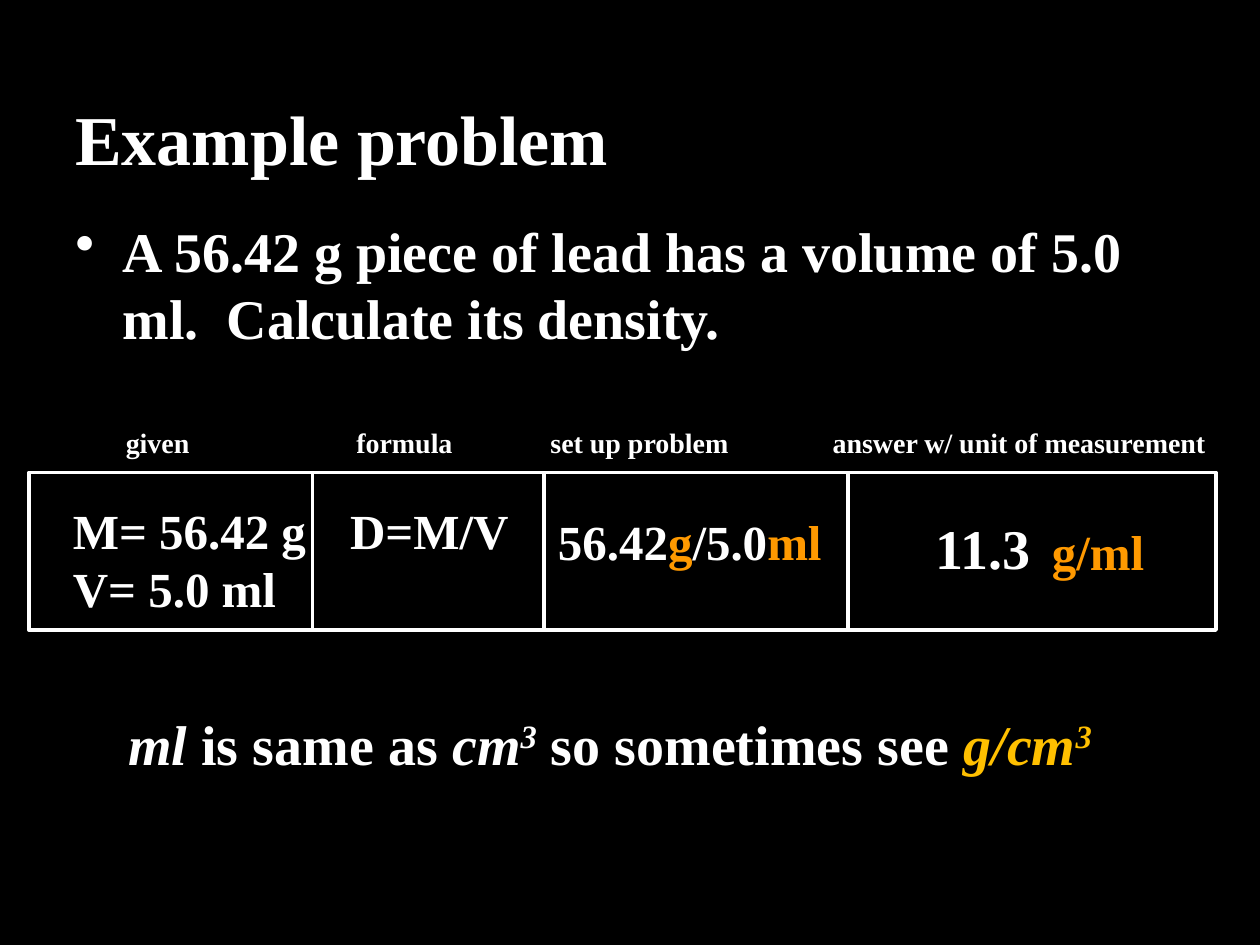
from dataclasses import dataclass

import pptx
import pptx.dml.color
import pptx.enum.shapes
import pptx.enum.text
import pptx.oxml
import pptx.oxml.ns
import pptx.util

COLUMNS, ROWS = 100, 75
FONT = "Times New Roman"
BLACK, WHITE, ORANGE, GOLD = "000000", "FFFFFF", "FF9900", "FFC000"
LINE_WIDTH = 2.25
FRAME_LEFT, FRAME_TOP, FRAME_WIDTH, FRAME_HEIGHT = 2.3, 37.5, 94.2, 12.5
DIVIDERS = (24.8, 43.2, 67.3)


@dataclass
class Piece:
    text: str
    color: str = WHITE
    italic: bool = False
    superscript: bool = False


@dataclass
class TextBlock:
    left: float
    top: float
    width: float
    height: float
    size: int
    lines: list[list[Piece]]
    wrap: bool = True
    middle: bool = False
    bullet: bool = False
    tabs: tuple[float, ...] = ()


BLOCKS = [
    TextBlock(5, 8.3, 90, 5.3, 40, [[Piece("Example problem")]], middle=True),
    TextBlock(5, 16.7, 86.9, 11.7, 32,
              [[Piece("A 56.42 g piece of lead has a volume of 5.0 ml.  Calculate its density.")]],
              bullet=True),
    TextBlock(4.8, 39.2, 40.2, 10.3, 28,
              [[Piece("M= 56.42 g\tD=M/V")], [Piece("V= 5.0 ml")]], tabs=(22,)),
    TextBlock(9, 33.3, 88.2, 3.7, 16,
              [[Piece("given\tformula\tset up problem\tanswer w/ unit of measurement")]],
              tabs=(18.3, 33.7, 56.1)),
    TextBlock(9.2, 55.8, 79.6, 6.4, 32,
              [[Piece("ml", italic=True), Piece(" is same as "), Piece("cm", italic=True),
                Piece("3", italic=True, superscript=True), Piece(" so sometimes see "),
                Piece("g/cm", GOLD, italic=True),
                Piece("3", GOLD, italic=True, superscript=True)]], wrap=False),
    TextBlock(43.3, 40.1, 23.2, 5.7, 28,
              [[Piece("56.42"), Piece("g", ORANGE), Piece("/5.0"), Piece("ml", ORANGE)]],
              wrap=False),
    TextBlock(73.3, 40.3, 9.6, 6.4, 32, [[Piece("11.3")]], wrap=False),
    TextBlock(82.5, 40.9, 9.4, 5.7, 28, [[Piece("g/ml", ORANGE)]], wrap=False),
]

presentation = pptx.Presentation()
presentation.slide_width = pptx.util.Inches(10)
presentation.slide_height = pptx.util.Inches(7.5)


def across(columns: float) -> int:
    return round(presentation.slide_width * columns / COLUMNS)


def down(rows: float) -> int:
    return round(presentation.slide_height * rows / ROWS)


def rgb(color: str) -> pptx.dml.color.RGBColor:
    return pptx.dml.color.RGBColor.from_string(color)


def style_line(line) -> None:
    line.color.rgb = rgb(WHITE)
    line.width = pptx.util.Pt(LINE_WIDTH)


def add_child(parent, tag: str, **attributes: str):
    child = pptx.oxml.parse_xml(f"<{tag} {pptx.oxml.ns.nsdecls('a')}/>")
    for name, value in attributes.items():
        child.set(name, value)
    parent.append(child)
    return child


def draw_frame(slide) -> None:
    frame = slide.shapes.add_shape(
        pptx.enum.shapes.MSO_SHAPE.RECTANGLE, across(FRAME_LEFT), down(FRAME_TOP),
        across(FRAME_WIDTH), down(FRAME_HEIGHT))
    frame.shadow.inherit = False
    frame.fill.background()
    style_line(frame.line)
    for column in DIVIDERS:
        divider = slide.shapes.add_connector(
            pptx.enum.shapes.MSO_CONNECTOR.STRAIGHT, across(column), down(FRAME_TOP),
            across(column), down(FRAME_TOP + FRAME_HEIGHT))
        style_line(divider.line)
        add_child(divider._element.spPr, "a:effectLst")


def draw_text(slide, block: TextBlock) -> None:
    shape = slide.shapes.add_textbox(
        across(block.left), down(block.top), across(block.width), down(block.height))
    text_frame = shape.text_frame
    text_frame.word_wrap = block.wrap
    if block.middle:
        text_frame.vertical_anchor = pptx.enum.text.MSO_ANCHOR.MIDDLE
    text_frame.text = "\n".join("" for _ in block.lines)
    for paragraph, pieces in zip(text_frame.paragraphs, block.lines):
        if block.bullet:
            paragraph.space_before = pptx.util.Pt(block.size * 0.2)
            properties = paragraph._p.get_or_add_pPr()
            indent = across(3.75)
            properties.set("marL", str(indent))
            properties.set("indent", str(-indent))
            add_child(properties, "a:buChar", char="•")
        if block.tabs:
            tab_list = add_child(paragraph._p.get_or_add_pPr(), "a:tabLst")
            for tab in block.tabs:
                add_child(tab_list, "a:tab", pos=str(across(tab)), algn="l")
        for piece in pieces:
            run = paragraph.add_run()
            run.text = piece.text
            run.font.name = FONT
            run.font.size = pptx.util.Pt(block.size)
            run.font.bold = True
            run.font.italic = piece.italic
            run.font.color.rgb = rgb(piece.color)
            if piece.superscript:
                run._r.get_or_add_rPr().set("baseline", "30000")


def main() -> None:
    slide = presentation.slides.add_slide(presentation.slide_layouts[6])
    slide.background.fill.solid()
    slide.background.fill.fore_color.rgb = rgb(BLACK)
    draw_frame(slide)
    for block in BLOCKS:
        draw_text(slide, block)
    presentation.save("out.pptx")


if __name__ == "__main__":
    main()
